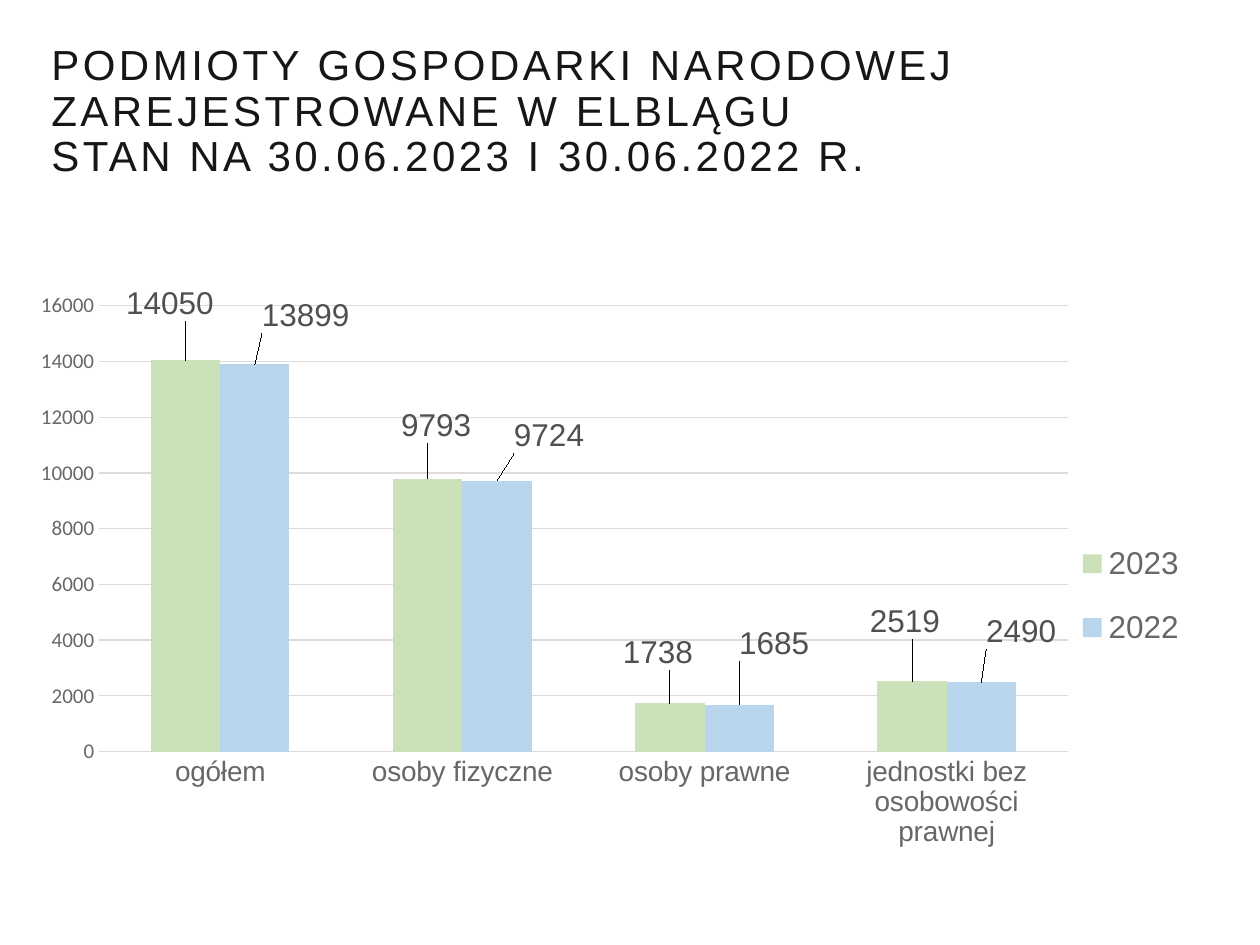
from lxml.etree import SubElement
from pptx import Presentation
from pptx.chart.data import CategoryChartData as ChartData
from pptx.dml.color import RGBColor as RGB
from pptx.enum.chart import XL_CHART_TYPE as Kind
from pptx.enum.chart import XL_LABEL_POSITION as Spot
from pptx.enum.chart import XL_LEGEND_POSITION as Side
from pptx.enum.chart import XL_TICK_MARK as Tick
from pptx.enum.text import MSO_ANCHOR as Anchor
from pptx.enum.text import MSO_AUTO_SIZE as Fit
from pptx.enum.text import PP_ALIGN as Align
from pptx.oxml.ns import qn
from pptx.util import Cm, Pt

COLORS = {
    "title": "171616",
    "axis": "6A6666",
    "label": "524F4F",
    "grid": "DDDBDB",
    "2023": "CAE1B9",
    "2022": "B9D5EC",
}
TITLE = [
    "PODMIOTY GOSPODARKI NARODOWEJ ZAREJESTROWANE W ELBLĄGU",
    "STAN NA 30.06.2023 I 30.06.2022 R.",
]
GROUPS = ["ogółem", "osoby fizyczne", "osoby prawne", "jednostki bez osobowości prawnej"]
VALUES = {"2023": [14050, 9793, 1738, 2519], "2022": [13899, 9724, 1685, 2490]}
# Label shifts from the bar end, in percent of the chart's width and height
SHIFTS = {
    "2023": [(-1.3, -5.5), (0.7, -4.9), (-1, -4.5), (-0.6, -6)],
    "2022": [(4.2, -4.2), (4.3, -3.6), (2.9, -6.2), (3.3, -4.5)],
}


def color(name):
    return RGB.from_string(COLORS[name])


def style(font, size, name, face="Arial"):
    font.size, font.name, font.bold = Pt(size), face, False
    font.color.rgb = color(name)


def place(part, index, **dims):
    """Give a chart part a manual layout, as child number index; dims are percent."""
    for old in part.findall(qn("c:layout")):
        part.remove(old)
    layout = SubElement(part, qn("c:layout"))
    part.insert(index, layout)
    manual = SubElement(layout, qn("c:manualLayout"))
    for tag, value in dims.items():
        text = value if isinstance(value, str) else f"{value / 100:.3f}"
        SubElement(manual, qn(f"c:{tag}")).set("val", text)


def add_title(slide):
    box = slide.shapes.title
    box.left, box.top, box.width, box.height = Cm(0.3), Cm(0.81), Cm(25), Cm(2.92)
    frame = box.text_frame
    frame.text = "\n".join(TITLE)
    frame.word_wrap, frame.auto_size = True, Fit.NONE
    frame.vertical_anchor = Anchor.MIDDLE
    for para in frame.paragraphs:
        para.alignment, para.line_spacing = Align.LEFT, 0.9
        para.space_before = Pt(0)
        props = para._p.get_or_add_pPr()
        props.set("marL", str(Cm(0.48)))
        props.set("indent", "0")
        for run in para.runs:
            style(run.font, 24, "title")
            run._r.get_or_add_rPr().set("spc", "200")


def add_labels(series):
    labels = series.data_labels
    labels.show_value = True
    style(labels.font, 18, "label")
    for i, (x, y) in enumerate(SHIFTS[series.name]):
        label = series.points[i].data_label
        style(label.font, 18, "label")
        label.position = Spot.OUTSIDE_END
    for part, (x, y) in zip(labels._element.findall(qn("c:dLbl")), SHIFTS[series.name]):
        place(part, 1, x=x, y=y)


def set_axes(chart):
    for axis, size, face in [
        (chart.category_axis, 16, "Arial"),
        (chart.value_axis, 12, "Calibri"),
    ]:
        axis.major_tick_mark = axis.minor_tick_mark = Tick.NONE
        axis.format.line.fill.background()
        style(axis.tick_labels.font, size, "axis", face)
    scale = chart.value_axis
    scale.minimum_scale, scale.maximum_scale, scale.major_unit = 0, 16000, 2000
    grid = scale.major_gridlines.format.line
    grid.width = Pt(0.75)
    grid.color.rgb = color("grid")


def set_legend(chart):
    chart.has_legend = True
    legend = chart.legend
    legend.position = Side.BOTTOM
    legend.include_in_layout = False
    style(legend.font, 18, "axis")
    place(legend._element, 1, xMode="edge", yMode="edge", x=86.3, y=41, w=10, h=25.3)


def add_chart(slide):
    data = ChartData()
    data.categories = GROUPS
    for year, values in VALUES.items():
        data.add_series(year, values)
    frame = slide.shapes.add_chart(
        Kind.COLUMN_CLUSTERED, Cm(0.51), Cm(5.33), Cm(24.41), Cm(12.45), data
    )
    chart = frame.chart
    chart.has_title = False
    style(chart.font, 10, "title", "Calibri")
    set_axes(chart)
    set_legend(chart)
    plot = chart.plots[0]
    plot.gap_width, plot.overlap, plot.vary_by_categories = 150, 0, False
    for series in plot.series:
        series.format.fill.solid()
        series.format.fill.fore_color.rgb = color(series.name)
        add_labels(series)
    area = chart._chartSpace.chart.plotArea
    place(area, 0, layoutTarget="inner", xMode="edge", yMode="edge",
          x=6.1, y=6.7, w=80, h=72.2)


def main():
    deck = Presentation()
    deck.slide_width, deck.slide_height = Cm(25.4), Cm(19.05)
    slide = deck.slides.add_slide(deck.slide_layouts[5])
    add_title(slide)
    add_chart(slide)
    deck.save("out.pptx")


if __name__ == "__main__":
    main()
